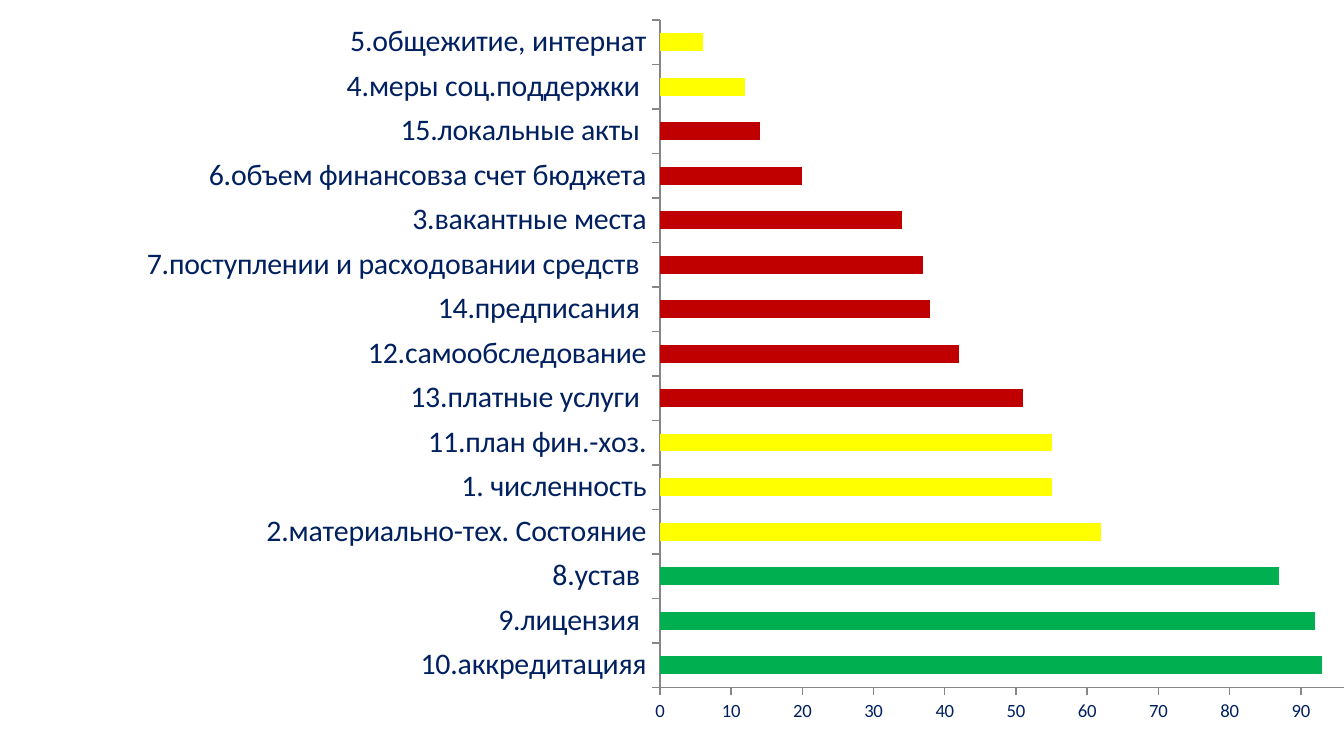
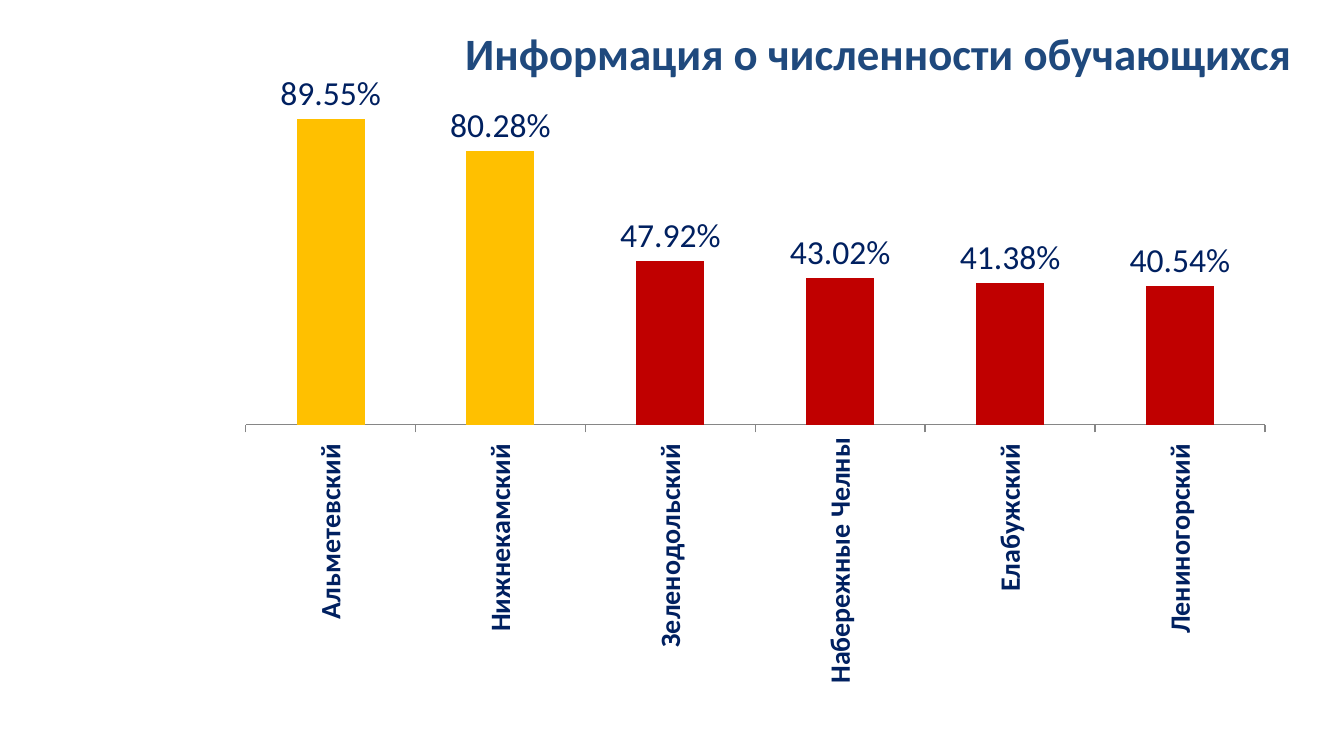
from typing import NamedTuple, Optional

from lxml import etree
from pptx import Presentation, util as u
from pptx.chart.data import CategoryChartData
from pptx.dml.color import RGBColor
from pptx.enum import chart as ch, text
from pptx.oxml import ns

FONT = "Calibri"
COLORS = {
    "navy": "002060",
    "title": "1F497D",
    "axis": "868686",
    "green": "00B050",
    "yellow": "FFFF00",
    "amber": "FFC000",
    "red": "C00000",
}
WIDTH = u.Inches(10)
HEIGHT = WIDTH * 9 // 16
CELL = WIDTH // 100
TITLE_ONLY, BLANK = 5, 6


class Box(NamedTuple):
    x: float
    y: float
    w: float
    h: float

    def emu(self) -> tuple[int, ...]:
        return tuple(round(cells * CELL) for cells in self)


class Bar(NamedTuple):
    label: str
    value: float
    color: str


class BarChart(NamedTuple):
    kind: ch.XL_CHART_TYPE
    box: Box
    plot: Optional[Box]
    bars: list[Bar]
    base: str
    top: float
    step: float
    number_format: str
    size: int
    label_size: int
    bold: bool
    show_values: bool
    upright: bool


SECTIONS = BarChart(
    ch.XL_CHART_TYPE.BAR_CLUSTERED,
    Box(5.1, -0.8, 100, 57.1), Box(0.44, 0.04, 0.53, 0.87),
    [
        Bar("10.аккредитацияя", 93, "green"),
        Bar("9.лицензия ", 92, "green"),
        Bar("8.устав ", 87, "green"),
        Bar("2.материально-тех. Состояние", 62, "yellow"),
        Bar("1. численность", 55, "yellow"),
        Bar("11.план фин.-хоз.", 55, "yellow"),
        Bar("13.платные услуги ", 51, "red"),
        Bar("12.самообследование", 42, "red"),
        Bar("14.предписания ", 38, "red"),
        Bar("7.поступлении и расходовании средств ", 37, "red"),
        Bar("3.вакантные места", 34, "red"),
        Bar("6.объем финансовза счет бюджета", 20, "red"),
        Bar("15.локальные акты ", 14, "red"),
        Bar("4.меры соц.поддержки ", 12, "yellow"),
        Bar("5.общежитие, интернат", 6, "yellow"),
    ],
    base="yellow", top=100, step=10, number_format="General",
    size=10, label_size=16, bold=False, show_values=False, upright=False,
)
DISTRICTS = BarChart(
    ch.XL_CHART_TYPE.COLUMN_CLUSTERED,
    Box(16.7, 5.3, 79, 46.5), None,
    [
        Bar("Альметевский ", 0.8955, "amber"),
        Bar("Нижнекамский ", 0.8028, "amber"),
        Bar("Зеленодольский ", 0.4792, "red"),
        Bar("Набережные Челны", 0.4302, "red"),
        Bar("Елабужский ", 0.4138, "red"),
        Bar("Лениногорский ", 0.4054, "red"),
    ],
    base="red", top=1, step=0.2, number_format="0.00%",
    size=18, label_size=15, bold=True, show_values=True, upright=True,
)


def rgb(name: str) -> RGBColor:
    return RGBColor.from_string(COLORS[name])


def paint(fill, color: str) -> None:
    fill.solid()
    fill.fore_color.rgb = rgb(color)


def style_font(font, size: int, color: str, bold: bool = False) -> None:
    font.name, font.size, font.bold = FONT, u.Pt(size), bold
    font.color.rgb = rgb(color)


def place_plot(chart, plot: Box) -> None:
    area = chart.element.find(".//" + ns.qn("c:plotArea"))
    for old in area.findall(ns.qn("c:layout")):
        area.remove(old)
    layout = etree.Element(ns.qn("c:layout"))
    manual = etree.SubElement(layout, ns.qn("c:manualLayout"))
    settings = {"layoutTarget": "inner", "xMode": "edge", "yMode": "edge",
                **plot._asdict()}
    for tag, value in settings.items():
        etree.SubElement(manual, ns.qn(f"c:{tag}")).set("val", str(value))
    area.insert(0, layout)


def style_axis(axis, size: int, bold: bool) -> None:
    axis.has_major_gridlines = False
    axis.major_tick_mark = ch.XL_TICK_MARK.OUTSIDE
    axis.minor_tick_mark = ch.XL_TICK_MARK.NONE
    axis.format.line.color.rgb = rgb("axis")
    axis.format.line.width = u.Pt(0.75)
    style_font(axis.tick_labels.font, size, "navy", bold)


def add_bar_chart(slide, item: BarChart) -> None:
    data = CategoryChartData(number_format=item.number_format)
    data.categories = [bar.label for bar in item.bars]
    data.add_series("Series 1", [bar.value for bar in item.bars])
    chart = slide.shapes.add_chart(item.kind, *item.box.emu(), data).chart
    chart.has_title = chart.has_legend = False
    chart.font.name, chart.font.size = FONT, u.Pt(item.size)
    if item.plot:
        place_plot(chart, item.plot)

    style_axis(chart.category_axis, item.label_size, item.bold)
    if item.upright:
        body = chart.category_axis._element.find(".//" + ns.qn("a:bodyPr"))
        body.set("rot", "-5400000")
        body.set("vert", "horz")
    values = chart.value_axis
    style_axis(values, item.size, False)
    values.minimum_scale, values.maximum_scale = 0, item.top
    values.major_unit = item.step
    values.visible = not item.show_values

    plot = chart.plots[0]
    plot.gap_width, plot.vary_by_categories = 150, False
    series = plot.series[0]
    paint(series.format.fill, item.base)
    for i, bar in enumerate(item.bars):
        if bar.color != item.base:
            paint(series.points[i].format.fill, bar.color)
    if item.show_values:
        labels = series.data_labels
        labels.show_value = True
        labels.number_format = item.number_format
        labels.number_format_is_linked = False
        labels.position = ch.XL_LABEL_POSITION.OUTSIDE_END
        style_font(labels.font, item.size, "navy")


def set_title(slide, words: str, box: Box) -> None:
    sp = slide.shapes.title
    sp.left, sp.top, sp.width, sp.height = box.emu()
    tf = sp.text_frame
    tf.text = words
    tf.word_wrap = True
    tf.auto_size = text.MSO_AUTO_SIZE.SHAPE_TO_FIT_TEXT
    tf.vertical_anchor = text.MSO_ANCHOR.TOP
    p = tf.paragraphs[0]
    p.alignment = text.PP_ALIGN.CENTER
    style_font(p.font, 24, "title", True)


def main() -> None:
    prs = Presentation()
    prs.slide_width, prs.slide_height = WIDTH, HEIGHT

    sections = prs.slides.add_slide(prs.slide_layouts[BLANK])
    add_bar_chart(sections, SECTIONS)

    districts = prs.slides.add_slide(prs.slide_layouts[TITLE_ONLY])
    set_title(districts, "Информация о численности обучающихся",
              Box(31.9, 1.4, 66.9, 5))
    add_bar_chart(districts, DISTRICTS)

    prs.save("out.pptx")


if __name__ == "__main__":
    main()
